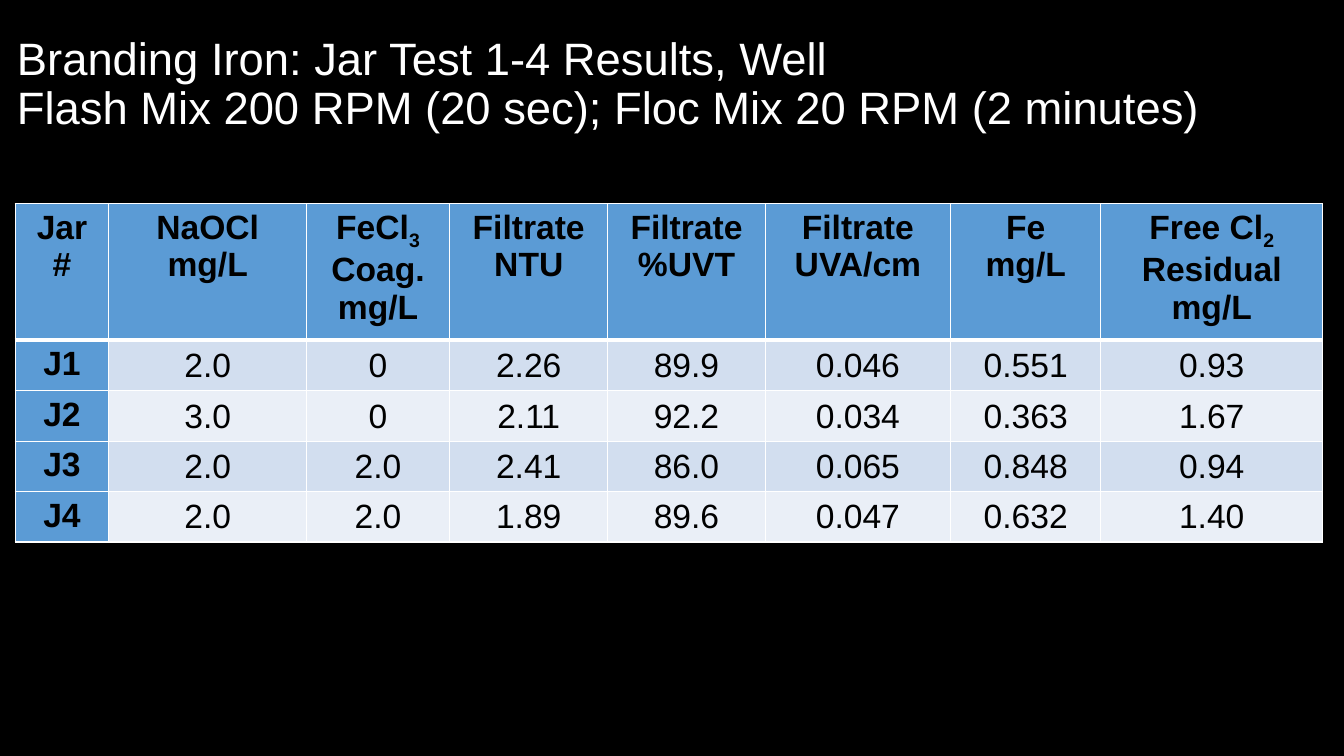
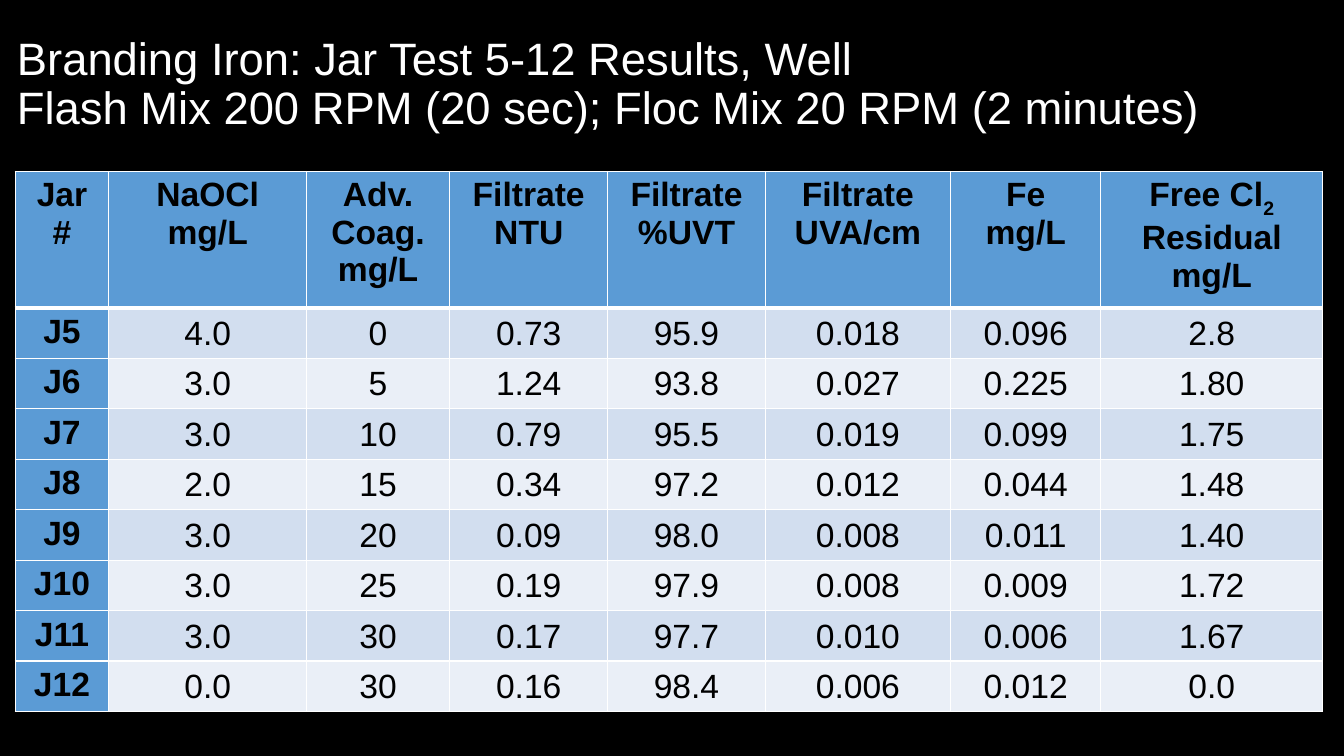
from lxml.etree import SubElement
from pptx import Presentation
from pptx.dml.color import RGBColor
from pptx.enum.text import MSO_ANCHOR as Anchor, PP_ALIGN as Align
from pptx.oxml.ns import qn
from pptx.util import Inches, Pt

BLACK = RGBColor(0x00, 0x00, 0x00)
WHITE = RGBColor(0xFF, 0xFF, 0xFF)
HEADER_BLUE = RGBColor(0x5B, 0x9B, 0xD5)
BAND_COLORS = (RGBColor(0xD2, 0xDE, 0xEF), RGBColor(0xEA, 0xEF, 0xF7))

FONT = "Arial"
TITLE_SIZE = Pt(32.4)
TABLE_SIZE = Pt(24)
THIN, THICK = Pt(1), Pt(3)

TABLE_LEFT = 0.15
COLUMN_WIDTHS = (0.93, 1.96, 1.42, 1.57, 1.56, 1.84, 1.49, 2.2)
HEADER_HEIGHT, ROW_HEIGHT = 1.04, 0.44
LABEL_MARGINS = (0.1, 0.05, 0.1, 0.05)
VALUE_MARGINS = (0.01, 0.01, 0.01, 0)

MIXING = "Flash Mix 200 RPM (20 sec); Floc Mix 20 RPM (2 minutes)"

# An underscore sets the rest of its line as a subscript.
WELL_TESTS = (
    ("1-4", "FeCl_3", 2.02, (
        ("J1", "2.0", "0", "2.26", "89.9", "0.046", "0.551", "0.93"),
        ("J2", "3.0", "0", "2.11", "92.2", "0.034", "0.363", "1.67"),
        ("J3", "2.0", "2.0", "2.41", "86.0", "0.065", "0.848", "0.94"),
        ("J4", "2.0", "2.0", "1.89", "89.6", "0.047", "0.632", "1.40"),
    )),
    ("5-12", "Adv.", 1.7, (
        ("J5", "4.0", "0", "0.73", "95.9", "0.018", "0.096", "2.8"),
        ("J6", "3.0", "5", "1.24", "93.8", "0.027", "0.225", "1.80"),
        ("J7", "3.0", "10", "0.79", "95.5", "0.019", "0.099", "1.75"),
        ("J8", "2.0", "15", "0.34", "97.2", "0.012", "0.044", "1.48"),
        ("J9", "3.0", "20", "0.09", "98.0", "0.008", "0.011", "1.40"),
        ("J10", "3.0", "25", "0.19", "97.9", "0.008", "0.009", "1.72"),
        ("J11", "3.0", "30", "0.17", "97.7", "0.010", "0.006", "1.67"),
        ("J12", "0.0", "30", "0.16", "98.4", "0.006", "0.012", "0.0"),
    )),
)


def header_labels(coagulant):
    return ("Jar\n#", "NaOCl\nmg/L", f"{coagulant}\nCoag.\nmg/L", "Filtrate\nNTU",
            "Filtrate\n%UVT", "Filtrate\nUVA/cm", "Fe\nmg/L",
            "Free Cl_2\nResidual\nmg/L")


def format_font(font, size, color, bold=False):
    font.name = FONT
    font.size = size
    font.color.rgb = color
    font.bold = bold


def add_title(slide, text):
    box = slide.shapes.add_textbox(Inches(0.07), Inches(0.12), Inches(13.03), Inches(1.45))
    frame = box.text_frame
    frame.word_wrap = True
    frame.vertical_anchor = Anchor.MIDDLE
    paragraph = frame.paragraphs[0]
    paragraph.text = text
    paragraph.line_spacing = 0.9
    for run in paragraph.runs:
        format_font(run.font, TITLE_SIZE, WHITE)


def write_cell(cell, text, bold):
    cell.text_frame.text = text
    for paragraph in cell.text_frame.paragraphs:
        paragraph.alignment = Align.CENTER
        base, _, subscript = paragraph.text.partition("_")
        paragraph.text = base
        if subscript:
            run = paragraph.add_run()
            run.text = subscript
            run.font._element.set("baseline", "-25000")
        for run in paragraph.runs:
            format_font(run.font, TABLE_SIZE, BLACK, bold)


def set_borders(cell, top, bottom):
    properties = cell._tc.get_or_add_tcPr()
    sides = (("L", THIN), ("R", THIN), ("T", top), ("B", bottom))
    for index, (side, width) in enumerate(sides):
        line = SubElement(properties, qn(f"a:ln{side}"), w=str(int(width)))
        fill = SubElement(line, qn("a:solidFill"))
        SubElement(fill, qn("a:srgbClr"), val=str(WHITE))
        properties.insert(index, line)  # borders must precede the cell fill


def set_margins(cell, margins):
    (cell.margin_left, cell.margin_top,
     cell.margin_right, cell.margin_bottom) = map(Inches, margins)


def style_cell(cell, row, column):
    is_label = row == 0 or column == 0
    set_margins(cell, LABEL_MARGINS if is_label else VALUE_MARGINS)
    cell.vertical_anchor = Anchor.TOP if is_label else Anchor.MIDDLE
    cell.fill.solid()
    cell.fill.fore_color.rgb = HEADER_BLUE if is_label else BAND_COLORS[(row - 1) % 2]
    set_borders(cell, top=THICK if row == 1 else THIN, bottom=THICK if row == 0 else THIN)


def add_results_table(slide, top, rows):
    height = HEADER_HEIGHT + ROW_HEIGHT * (len(rows) - 1)
    table = slide.shapes.add_table(
        len(rows), len(COLUMN_WIDTHS), Inches(TABLE_LEFT), Inches(top),
        Inches(sum(COLUMN_WIDTHS)), Inches(height)).table
    for column, width in zip(table.columns, COLUMN_WIDTHS):
        column.width = Inches(width)
    for row_index, values in enumerate(rows):
        table.rows[row_index].height = Inches(ROW_HEIGHT if row_index else HEADER_HEIGHT)
        for column_index, value in enumerate(values):
            cell = table.cell(row_index, column_index)
            write_cell(cell, value, bold=row_index == 0 or column_index == 0)
            style_cell(cell, row_index, column_index)


def add_results_slide(presentation, jars, coagulant, table_top, results):
    slide = presentation.slides.add_slide(presentation.slide_layouts[6])
    add_title(slide, f"Branding Iron: Jar Test {jars} Results, Well\v{MIXING}")
    add_results_table(slide, table_top, (header_labels(coagulant), *results))


def main():
    presentation = Presentation()
    presentation.slide_width = Inches(13.33)
    presentation.slide_height = Inches(7.5)
    background = presentation.slide_master.background.fill
    background.solid()
    background.fore_color.rgb = BLACK
    for well_test in WELL_TESTS:
        add_results_slide(presentation, *well_test)
    presentation.save("out.pptx")


if __name__ == "__main__":
    main()
